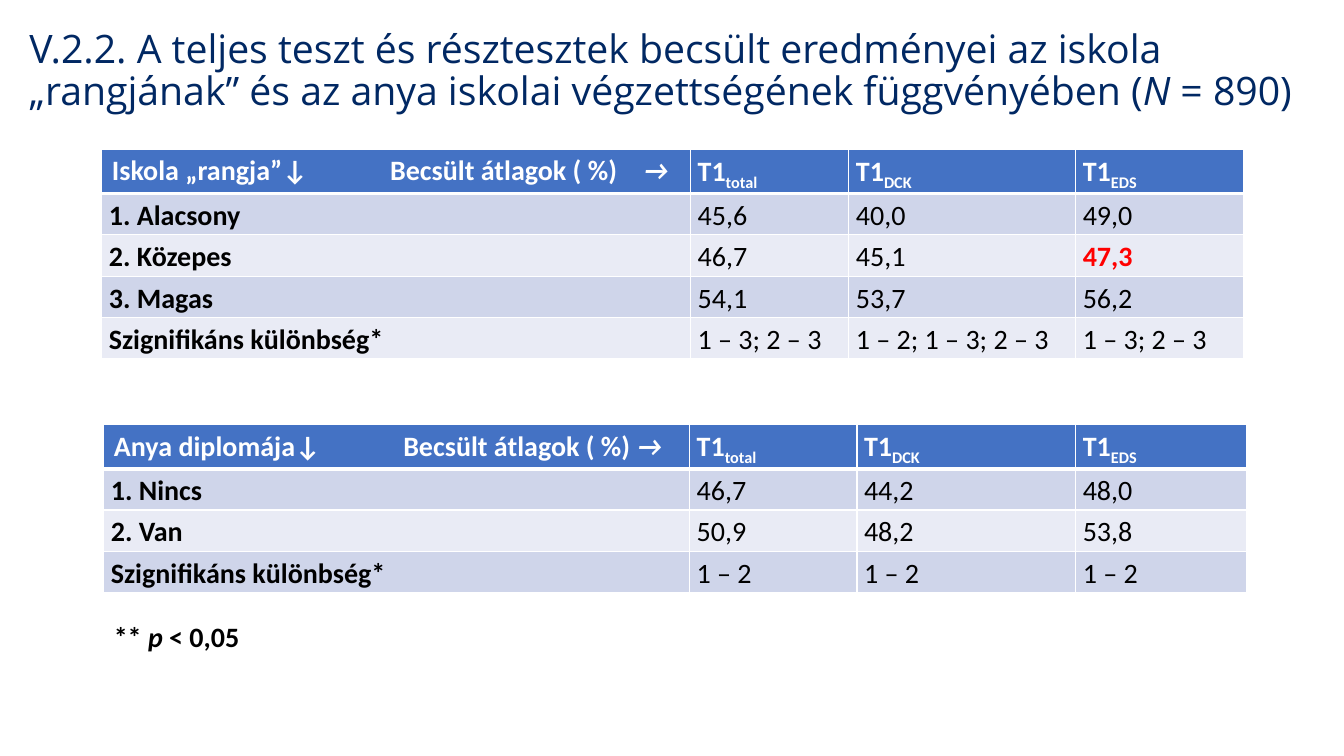
from lxml import etree
from pptx import Presentation
from pptx.dml.color import RGBColor
from pptx.enum.text import MSO_ANCHOR, MSO_AUTO_SIZE, PP_ALIGN
from pptx.oxml.ns import qn
from pptx.util import Inches, Pt

LEFT, MIDDLE = PP_ALIGN.LEFT, MSO_ANCHOR.MIDDLE
NO_FIT, GROW = MSO_AUTO_SIZE.NONE, MSO_AUTO_SIZE.SHAPE_TO_FIT_TEXT
COLORS = {"title": "012863", "header": "4472C4", "odd": "CFD5EA", "even": "E9EBF5",
          "white": "FFFFFF", "black": "000000", "red": "FF0000"}
TITLE_FONT = {"name": "Open Sans", "size": Pt(28), "bold": False}
BODY_FONT = {"name": "Calibri", "size": Pt(20), "bold": True}
ITALIC = {"italic": True}
ROW_HEIGHT = 0.41


def add_runs(paragraph, parts, base, color):
    """Add (text, extra font values) parts; "baseline" is in thousandths of a percent."""
    for text, extra in parts:
        run = paragraph.add_run()
        run.text = text
        run.font.color.rgb = RGBColor.from_string(COLORS[color])
        for name, value in {**base, **extra}.items():
            if name == "baseline":
                run.font._element.set(name, value)
            else:
                setattr(run.font, name, value)


def add_borders(cell, bottom_width):
    properties = cell._tc.get_or_add_tcPr()
    widths = {"lnL": 1, "lnR": 1, "lnT": 1, "lnB": bottom_width}
    for position, (tag, width) in enumerate(widths.items()):
        line = etree.Element(qn(f"a:{tag}"), w=str(Pt(width)))
        fill = etree.SubElement(line, qn("a:solidFill"))
        etree.SubElement(fill, qn("a:srgbClr"), val=COLORS["white"])
        properties.insert(position, line)


presentation = Presentation()
presentation.slide_width, presentation.slide_height = Inches(13.33), Inches(7.5)
slide = presentation.slides.add_slide(presentation.slide_layouts[5])

# Title
title = slide.shapes.title
title.left, title.top, title.width, title.height = map(Inches, (0.19, 0.28, 13, 0.87))
frame = title.text_frame
frame.auto_size, frame.vertical_anchor, frame.word_wrap = NO_FIT, MIDDLE, True
paragraph = frame.paragraphs[0]
paragraph.alignment, paragraph.line_spacing = LEFT, 0.9
add_runs(paragraph, [
    ("V.2.2. A teljes teszt és résztesztek becsült eredményei az iskola „rangjának” "
     "és az anya iskolai végzettségének függvényében (", {}),
    ("N", ITALIC), (" = 890)", {})], TITLE_FONT, "title")

# Tables of estimated means
TABLES = [
    {"left": 1.01, "top": 1.48, "columns": [5.84, 1.57, 2.25, 1.66],
     "tabs": [2.76, 5.27],
     "header": [("Iskola „rangja”↓\tBecsült átlagok ( %)\t", {}), ("→", ITALIC)],
     "rows": [["1. Alacsony", "45,6", "40,0", "49,0"],
              ["2. Közepes", "46,7", "45,1", "47,3"],
              ["3. Magas", "54,1", "53,7", "56,2"],
              ["Szignifikáns különbség*", "1 – 3; 2 – 3", "1 – 2; 1 – 3; 2 – 3",
               "1 – 3; 2 – 3"]],
     "highlight": (2, 3)},
    {"left": 1.03, "top": 4.21, "columns": [5.81, 1.66, 2.17, 1.69],
     "tabs": [2.87],
     "header": [("Anya diplomája↓\tBecsült átlagok ( %) ", {}), ("→", ITALIC)],
     "rows": [["1. Nincs", "46,7", "44,2", "48,0"],
              ["2. Van", "50,9", "48,2", "53,8"],
              ["Szignifikáns különbség*", "1 – 2", "1 – 2", "1 – 2"]],
     "highlight": None},
]
SCORE_HEADERS = [[("T1", {}), (name, {"baseline": "-25000"})]
                 for name in ("total", "DCK", "EDS")]

for data in TABLES:
    row_count = len(data["rows"]) + 1
    table = slide.shapes.add_table(
        row_count, len(data["columns"]), Inches(data["left"]), Inches(data["top"]),
        Inches(sum(data["columns"])), Inches(ROW_HEIGHT * row_count)).table
    for column, width in zip(table.columns, data["columns"]):
        column.width = Inches(width)
    body = [[[(text, {"bold": column == 0})] for column, text in enumerate(texts)]
            for texts in data["rows"]]
    for row, row_parts in enumerate([[data["header"], *SCORE_HEADERS], *body]):
        for column, parts in enumerate(row_parts):
            cell = table.cell(row, column)
            paragraph = cell.text_frame.paragraphs[0]
            color, fill = "black", "odd" if row % 2 else "even"
            if row == 0:
                color, fill = "white", "header"
            if (row, column) == data["highlight"]:
                color, parts = "red", [(parts[0][0], {"bold": True})]
            cell.fill.solid()
            cell.fill.fore_color.rgb = RGBColor.from_string(COLORS[fill])
            add_borders(cell, 1 if row else 3)
            if (row, column) == (0, 0):
                tab_list = etree.SubElement(paragraph._p.get_or_add_pPr(), qn("a:tabLst"))
                for position in data["tabs"]:
                    etree.SubElement(tab_list, qn("a:tab"),
                                     pos=str(Inches(position)), algn="l")
            else:
                cell.margin_left = cell.margin_right = Inches(0.07)
                cell.margin_top = cell.margin_bottom = 0
                paragraph.line_spacing, paragraph.space_after = 1.15, Pt(10)
            add_runs(paragraph, parts, BODY_FONT, color)

# Significance note
note = slide.shapes.add_textbox(*map(Inches, (1.03, 6.1, 1.79, 0.44)))
note.text_frame.word_wrap, note.text_frame.auto_size = True, GROW
add_runs(note.text_frame.paragraphs[0],
         [("** ", {}), ("p ", ITALIC), ("< 0,05", {})], BODY_FONT, "black")

presentation.save("out.pptx")
